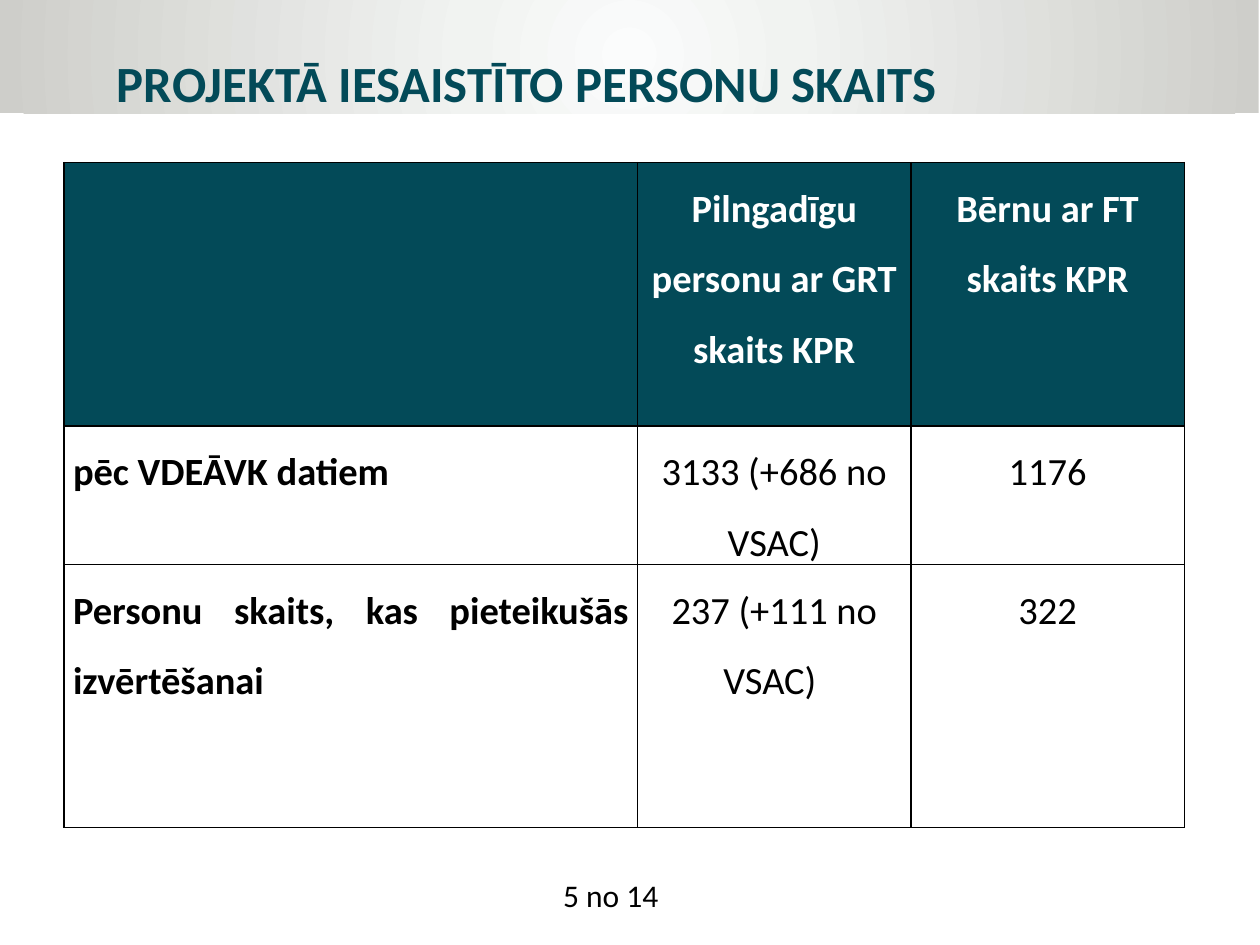
from lxml import etree
from pptx import Presentation
from pptx.dml.color import RGBColor
from pptx.enum import shapes, text
from pptx.oxml import parse_xml
from pptx.oxml.ns import nsdecls
from pptx.util import Inches, Pt

# Content
TITLE = "PROJEKTĀ IESAISTĪTO PERSONU SKAITS"
PAGE = "5 no 14"
ROWS = [
    ("", "Pilngadīgu personu ar GRT skaits KPR", "Bērnu ar FT skaits KPR"),
    ("pēc VDEĀVK datiem", "3133 (+686 no VSAC)", "1176"),
    ("Personu skaits, kas pieteikušās izvērtēšanai", "237 (+111 no VSAC) ", "322"),
]
COL_WIDTHS = (4.55, 2.17, 2.17)
ROW_HEIGHTS = (2.09, 1.04, 2.09)
COLORS = {"teal": "034A58", "black": "000000", "white": "FFFFFF"}
BAND_STOPS = [(0, "FBFCFC"), (26, "F1F3F1"), (100, "CECECA")]
FONT = "Calibri"


def style(p, size, color, bold=False):
    p.font.name, p.font.size, p.font.bold = FONT, Pt(size), bold
    p.font.color.rgb = RGBColor.from_string(COLORS[color])


def add_text(slide, box, words, size, color, bold=False):
    tf = slide.shapes.add_textbox(*map(Inches, box)).text_frame
    tf.word_wrap = True
    tf.auto_size = text.MSO_AUTO_SIZE.SHAPE_TO_FIT_TEXT
    p = tf.paragraphs[0]
    p.text = words
    style(p, size, color, bold)


def radial_fill(sp, stops):
    gs = "".join(f'<a:gs pos="{pos * 1000}"><a:srgbClr val="{color}"/></a:gs>'
                 for pos, color in stops)
    fill = parse_xml(
        f'<a:gradFill {nsdecls("a")} rotWithShape="1"><a:gsLst>{gs}</a:gsLst>'
        '<a:path path="circle"><a:fillToRect l="50000" t="50000" r="50000" b="50000"/>'
        '</a:path></a:gradFill>')
    sp._element.spPr.insert(2, fill)  # right after the geometry


def add_borders(cell):
    props = cell._tc.get_or_add_tcPr()
    for i, side in enumerate(("lnL", "lnR", "lnT", "lnB")):
        props.insert(i, parse_xml(
            f'<a:{side} {nsdecls("a")} w="{Pt(1)}"><a:solidFill>'
            f'<a:srgbClr val="{COLORS["black"]}"/></a:solidFill></a:{side}>'))


prs = Presentation()
prs.slide_width, prs.slide_height = Inches(10), Inches(7.5)
slide = prs.slides.add_slide(prs.slide_layouts[6])

# Header band
band = slide.shapes.add_shape(shapes.MSO_SHAPE.RECTANGLE, Inches(0), Inches(-0.03),
                              Inches(9.99), Inches(0.93))
band.shadow.inherit = False
band.line.fill.background()
radial_fill(band, BAND_STOPS)

# Title and page number
add_text(slide, (0.83, 0.36, 8.58, 0.59), TITLE, 29, "teal", True)
add_text(slide, (4.37, 6.9, 1.89, 0.4), PAGE, 18, "black")

# Table
table = slide.shapes.add_table(
    len(ROWS), len(COL_WIDTHS), Inches(0.51), Inches(1.29),
    Inches(sum(COL_WIDTHS)), Inches(sum(ROW_HEIGHTS))).table
for col, width in zip(table.columns, COL_WIDTHS):
    col.width = Inches(width)
for row, height in zip(table.rows, ROW_HEIGHTS):
    row.height = Inches(height)

for r, values in enumerate(ROWS):
    for c, value in enumerate(values):
        cell = table.cell(r, c)
        header, label = r == 0, c == 0
        cell.margin_left = cell.margin_right = Inches(0.07)
        cell.margin_top = cell.margin_bottom = 0
        if header:
            cell.fill.solid()
            cell.fill.fore_color.rgb = RGBColor.from_string(COLORS["teal"])
        else:
            cell.fill.background()
        add_borders(cell)
        p = cell.text_frame.paragraphs[0]
        p.text = value
        p.line_spacing = 1.5
        p.alignment = text.PP_ALIGN.JUSTIFY if label else text.PP_ALIGN.CENTER
        style(p, 22, "white" if header else "black", header or label)

prs.save("out.pptx")
